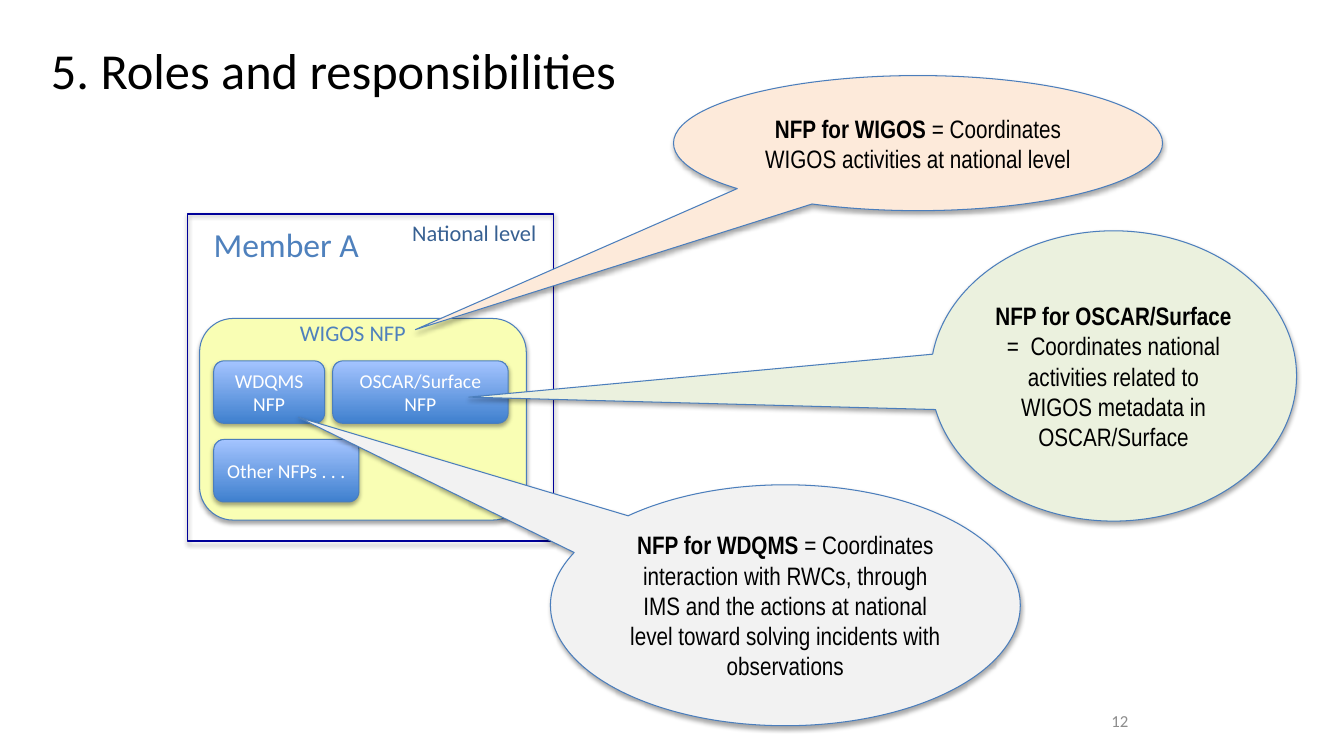
from lxml import etree
from pptx import Presentation
from pptx.dml.color import RGBColor
from pptx.enum.shapes import MSO_SHAPE as SHAPE
from pptx.enum.text import MSO_ANCHOR as ANCHOR, PP_ALIGN as ALIGN
from pptx.oxml.ns import qn
from pptx.util import Pt

PX = 9144  # EMU per px, 100 px to the inch

BLACK = RGBColor(0x00, 0x00, 0x00)
WHITE = RGBColor(0xFF, 0xFF, 0xFF)
GREY = RGBColor(0x8C, 0x8C, 0x8C)
NAVY = RGBColor(0x00, 0x00, 0x99)
OUTLINE = RGBColor(0x4B, 0x7E, 0xBC)
BLUE = RGBColor(0x4F, 0x81, 0xBD)
DARK_BLUE = RGBColor(0x37, 0x60, 0x92)
BUTTON_BOTTOM = RGBColor(0x3F, 0x80, 0xCE)
BUTTON_TOP = RGBColor(0xA4, 0xC4, 0xFF)
YELLOW = RGBColor(0xF9, 0xFE, 0xB4)
PEACH = RGBColor(0xFD, 0xEA, 0xDA)
GREEN = RGBColor(0xEB, 0xF1, 0xDE)
PALE_GREY = RGBColor(0xF2, 0xF2, 0xF2)


def emu(*lengths):
    return [n * PX for n in lengths]


def add_shadow(sp):
    """Replace the theme shadow with a soft one falling straight down."""
    sp.shadow.inherit = False
    effects = sp._element.spPr.find(qn("a:effectLst"))
    shadow = etree.SubElement(effects, qn("a:outerShdw"), blurRad="40000",
                              dist="23000", dir="5400000", rotWithShape="0")
    color = etree.SubElement(shadow, qn("a:srgbClr"), val="000000")
    etree.SubElement(color, qn("a:alpha"), val="35000")


def write(sp, runs, size, color, font="Calibri", align=ALIGN.CENTER,
          anchor=ANCHOR.MIDDLE, wrap=True):
    """Fill a shape with one paragraph of (text, bold) runs."""
    tf = sp.text_frame
    tf.word_wrap = wrap
    tf.vertical_anchor = anchor
    p = tf.paragraphs[0]
    p.alignment = align
    p.font.name, p.font.size = font, Pt(size)
    p.font.color.rgb = color
    for text, bold in runs:
        r = p.add_run()
        r.text = text
        if bold:
            r.font.bold = True


def add_label(slide, box, text, size, color, **style):
    sp = slide.shapes.add_textbox(*emu(*box))
    write(sp, [(text, False)], size, color, **style)


def add_panel(slide, kind, box, fill=None, line=OUTLINE, weight=0.75):
    """Add an outlined, shadowed shape; without a fill it is see-through."""
    sp = slide.shapes.add_shape(kind, *emu(*box))
    if fill is None:
        sp.fill.background()
    else:
        sp.fill.solid()
        sp.fill.fore_color.rgb = fill
    sp.line.color.rgb = line
    sp.line.width = Pt(weight)
    add_shadow(sp)
    return sp


def add_button(slide, box, text):
    sp = add_panel(slide, SHAPE.ROUNDED_RECTANGLE, box)
    sp.fill.gradient()
    sp.fill.gradient_angle = 90
    for stop, color in zip(sp.fill.gradient_stops, (BUTTON_BOTTOM, BUTTON_TOP)):
        stop.color.rgb = color
    write(sp, [(text, False)], 14, WHITE)


def add_member(slide, box):
    """The member's frame with its focal points."""
    x, y, w, h = box
    add_panel(slide, SHAPE.FLOWCHART_PROCESS, box, line=NAVY, weight=1.25)
    add_label(slide, (x + 15, y + 5, 166, 50), "Member A", 24, BLUE,
              anchor=ANCHOR.TOP, wrap=False)
    add_panel(slide, SHAPE.ROUNDED_RECTANGLE, (x + 12, y + 104, w - 39, 200), YELLOW)

    left, gap, row_h = x + 26, 8, 62
    top = y + 146
    wdqms_w = 110
    add_button(slide, (left + wdqms_w + gap, top, 174, row_h), "OSCAR/Surface NFP")
    add_button(slide, (left, top, wdqms_w, row_h), "WDQMS NFP")
    add_button(slide, (left, top + row_h + 2 * gap, 144, row_h), "Other NFPs . . .")

    add_label(slide, (x + 46, y + 100, 236, 37), "WIGOS NFP", 16, BLUE,
              anchor=ANCHOR.TOP)
    add_label(slide, (x + 213, y, 174, 37), "National level", 16, DARK_BLUE,
              align=ALIGN.LEFT, anchor=ANCHOR.TOP)


def add_callout(slide, box, tip, fill, role, duty):
    """Add a speech bubble whose tail ends at the slide point tip."""
    x, y, w, h = box
    sp = add_panel(slide, SHAPE.OVAL_CALLOUT, box, fill)
    sp.adjustments[0] = (tip[0] - x) / w - 0.5
    sp.adjustments[1] = (tip[1] - y) / h - 0.5
    write(sp, [(role + " ", True), (duty, False)], 18, BLACK, font="Arial Narrow")


CALLOUTS = [
    ((668, 75, 485, 134), (412, 327), PEACH, "NFP for WIGOS",
     "= Coordinates WIGOS activities at national level"),
    ((923, 229, 363, 288), (465, 394), GREEN, "NFP for OSCAR/Surface",
     "=  Coordinates national activities related to WIGOS metadata in OSCAR/Surface"),
    ((546, 481, 466, 239), (296, 414), PALE_GREY, "NFP for WDQMS",
     "= Coordinates interaction with RWCs, through IMS and the actions at "
     "national level toward solving incidents with observations"),
]


def main():
    prs = Presentation()
    prs.slide_width, prs.slide_height = emu(1333, 750)
    slide = prs.slides.add_slide(prs.slide_layouts[6])
    add_label(slide, (896, 695, 233, 40), "12", 12, GREY, align=ALIGN.RIGHT)
    add_member(slide, (186, 212, 363, 325))
    for callout in CALLOUTS:
        add_callout(slide, *callout)
    add_label(slide, (21, 26, 620, 85), "5. Roles and responsibilities", 36, BLACK)
    prs.save("out.pptx")


if __name__ == "__main__":
    main()
